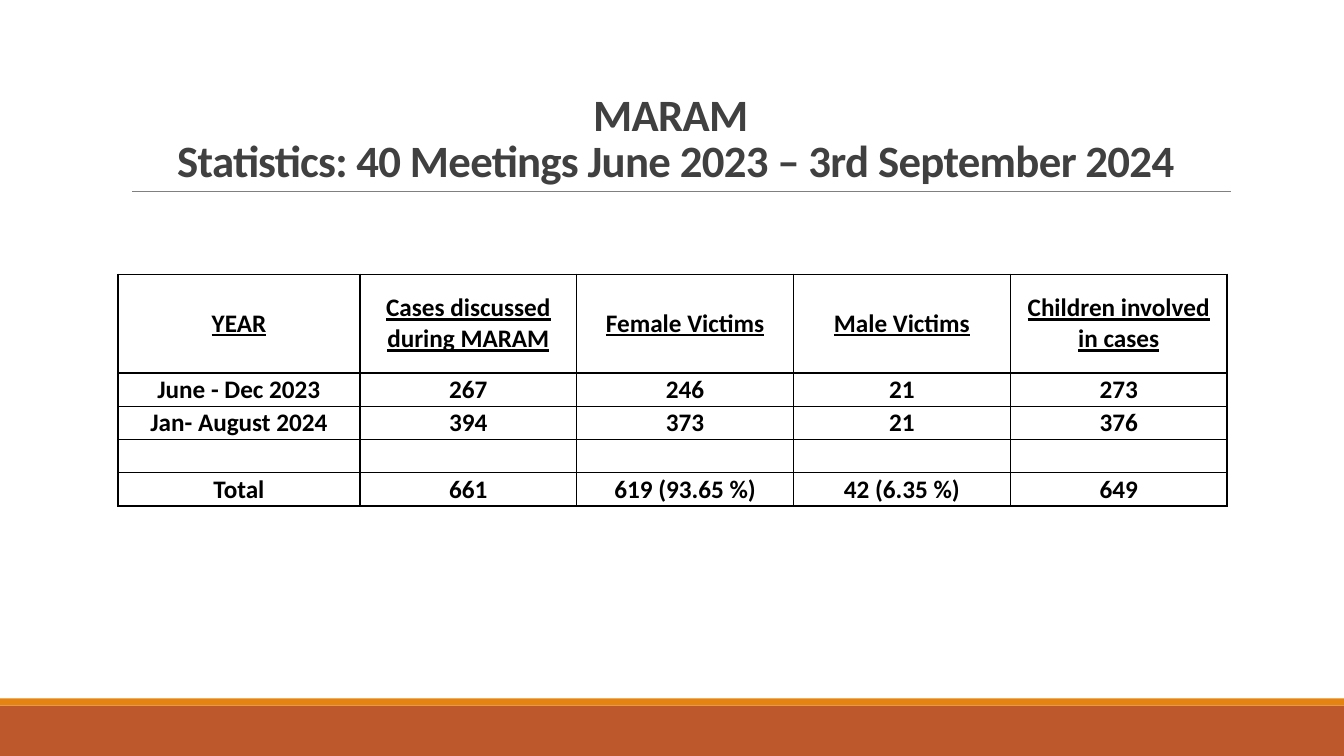
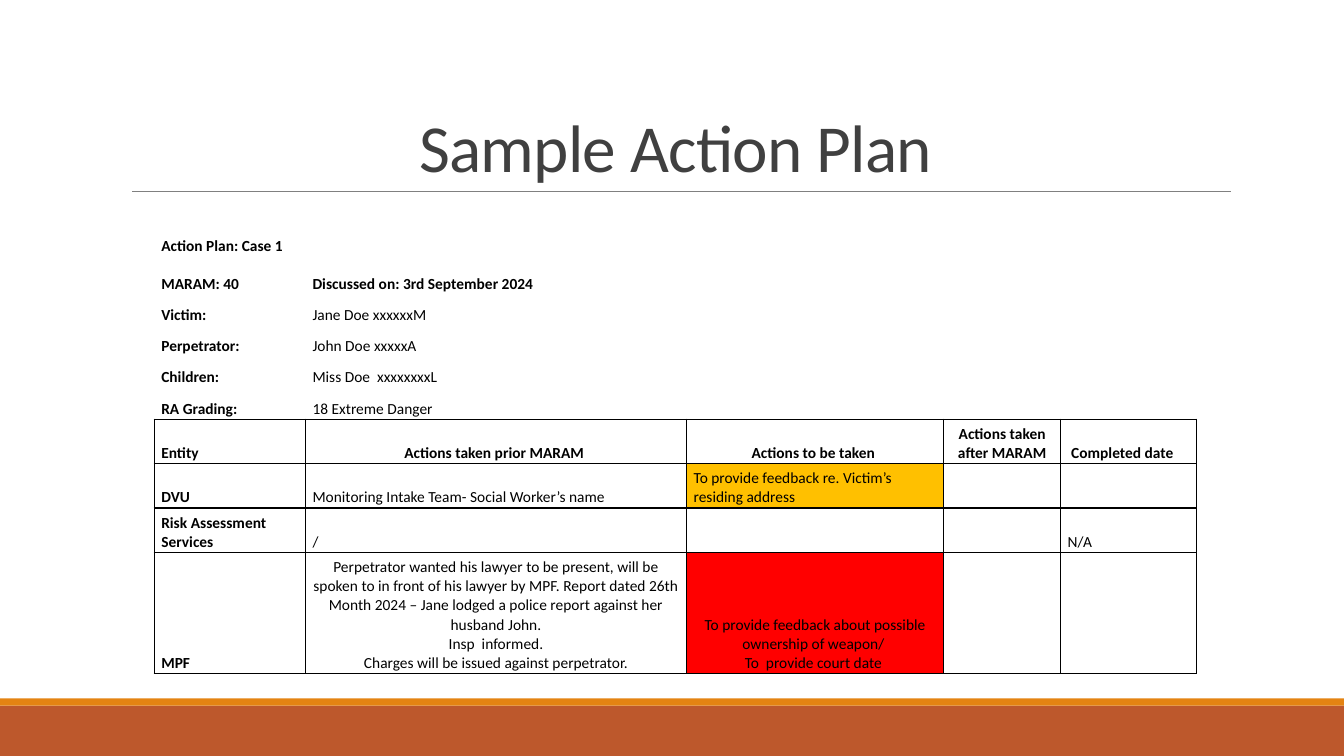
from pptx import Presentation
from pptx.dml.color import RGBColor
from pptx.enum.shapes import MSO_CONNECTOR, MSO_SHAPE
from pptx.enum.text import MSO_ANCHOR, MSO_AUTO_SIZE, PP_ALIGN
from pptx.oxml import parse_xml
from pptx.oxml.ns import nsdecls, qn
from pptx.util import Emu, Pt

SCALE = 9144
WIDTH, HEIGHT = 1333, 750
FONT = "Calibri"
BLACK, GREY, RULE = "000000", "404040", "808080"
RUST, AMBER = "BD582C", "E48312"
YELLOW, RED = "FFC000", "FF0000"
PLAIN = "{2D5ABB26-0587-4C30-8999-92F81FD0307C}"

STATS = [
    ["YEAR", "Cases discussed during MARAM", "Female Victims", "Male Victims",
     "Children involved in cases"],
    ["June - Dec 2023", "267", "246", "21", "273"],
    ["Jan- August 2024", "394", "373", "21", "376"],
    ["", "", "", "", ""],
    ["Total", "661", "619 (93.65 %)", "42 (6.35 %)", "649"],
]
PLAN = [
    ["Action Plan: Case 1\nMARAM: 40", "Discussed on: 3rd September 2024", "", "", ""],
    ["Victim:", "Jane Doe xxxxxxM", "", "", ""],
    ["Perpetrator:", "John Doe xxxxxA", "", "", ""],
    ["Children:", "Miss Doe  xxxxxxxxL", "", "", ""],
    ["RA Grading:", "18 Extreme Danger", "", "", ""],
    ["Entity", "Actions taken prior MARAM ", "Actions to be taken ",
     "Actions taken after MARAM", " Completed date"],
    ["DVU", "Monitoring Intake Team- Social Worker’s name",
     "To provide feedback re. Victim’s residing address", "", ""],
    ["Risk Assessment Services", "/", "", "", "N/A"],
    ["MPF",
     "Perpetrator wanted his lawyer to be present, will be spoken to in front of "
     "his lawyer by MPF. Report dated 26th Month 2024 – Jane lodged a police report "
     "against her husband John.\vInsp  informed.\vCharges will be issued against "
     "perpetrator.",
     "To provide feedback about possible ownership of weapon/ \nTo  provide court date ",
     "", ""],
]
ENTITY = 5
CENTRED = {(5, 1), (5, 2), (5, 3), (8, 1), (8, 2)}
FILLS = {(6, 2): YELLOW, (8, 2): RED}


def px(num):
    """Turn px into EMU."""
    return Emu(num * SCALE)


def rgb(code):
    """Turn a hex string into a colour."""
    return RGBColor.from_string(code)


def write(frame, text, size, color=BLACK, bold=False, line=False, mid=False,
          lead=None, track=None, gap=0):
    """Put text into a frame and format its paragraphs and runs."""
    frame.text = text
    frame.word_wrap = True
    for num, para in enumerate(frame.paragraphs):
        para.alignment = PP_ALIGN.CENTER if mid else PP_ALIGN.LEFT
        para.line_spacing = lead
        para.space_before = Pt(gap if num else 0)
        for run in para.runs:
            font = run.font
            font.name, font.size = FONT, Pt(size)
            font.bold, font.underline = bold, line
            font.color.rgb = rgb(color)
            if track is not None:
                run._r.get_or_add_rPr().set("spc", str(track))


def band(slide, top, height, color):
    """Draw a band across the whole slide."""
    shape = slide.shapes.add_shape(
        MSO_SHAPE.RECTANGLE, 0, px(top), px(WIDTH), px(height))
    shape.shadow.inherit = False
    shape.fill.solid()
    shape.fill.fore_color.rgb = rgb(color)
    shape.line.fill.background()


def rule(slide, left, right, top):
    """Draw the thin line under the title."""
    line = slide.shapes.add_connector(
        MSO_CONNECTOR.STRAIGHT, px(left), px(top), px(right), px(top))
    line.line.color.rgb = rgb(RULE)
    line.line.width = Pt(0.5)
    line._element.spPr.append(parse_xml(f"<a:effectLst {nsdecls('a')}/>"))


def start(deck, text, size, bold=False):
    """Add a slide with its bands, line and title."""
    slide = deck.slides.add_slide(deck.slide_layouts[5])
    band(slide, 700, 50, RUST)
    band(slide, 693, 7, AMBER)
    rule(slide, 131, 1221, 190)
    title = slide.shapes.title
    title.left, title.top = px(120), px(31)
    title.width, title.height = px(1100), px(159)
    frame = title.text_frame
    frame.auto_size = MSO_AUTO_SIZE.NONE
    frame.vertical_anchor = MSO_ANCHOR.BOTTOM
    write(frame, text, size, color=GREY, bold=bold, mid=True, lead=0.85, track=-50)
    return slide


def edge(cell):
    """Give a cell a thin black border on each side."""
    props = cell._tc.get_or_add_tcPr()
    for num, side in enumerate("LRTB"):
        props.insert(num, parse_xml(
            f'<a:ln{side} {nsdecls("a")} w="12700"><a:solidFill>'
            f'<a:srgbClr val="{BLACK}"/></a:solidFill></a:ln{side}>'))


def grid(slide, left, top, cols, rows):
    """Add a plain table with the given column widths and row heights."""
    table = slide.shapes.add_table(
        len(rows), len(cols), px(left), px(top), px(sum(cols)), px(sum(rows))).table
    table.first_row = table.horz_banding = False
    table._tbl.tblPr.find(qn("a:tableStyleId")).text = PLAIN
    for col, width in zip(table.columns, cols):
        col.width = px(width)
    for row, height in zip(table.rows, rows):
        row.height = px(height)
    return table


def fill(cell, text, size, back=None, box=True, anchor=MSO_ANCHOR.BOTTOM, **style):
    """Set a cell's text, margins, fill and border."""
    cell.margin_left = cell.margin_right = px(7)
    cell.margin_top = cell.margin_bottom = px(1 if text else 0)
    cell.vertical_anchor = anchor
    write(cell.text_frame, text, size, **style)
    if back:
        cell.fill.solid()
        cell.fill.fore_color.rgb = rgb(back)
    else:
        cell.fill.background()
    if box:
        edge(cell)


def stats(deck):
    """Build the slide of meeting statistics."""
    slide = start(
        deck, "MARAM \vStatistics: 40 Meetings June 2023 – 3rd September 2024", 32, True)
    table = grid(slide, 117, 272, [240] + [215] * 4, [98] + [33] * 4)
    for row, texts in enumerate(STATS):
        for col, text in enumerate(texts):
            fill(table.cell(row, col), text, 18, anchor=MSO_ANCHOR.MIDDLE,
                 bold=True, line=row == 0, mid=True)


def plan(deck):
    """Build the slide of the sample action plan."""
    slide = start(deck, "Sample Action Plan", 48)
    table = grid(slide, 153, 229, [150, 378, 255, 116, 135],
                 [63] + [31] * 4 + [44] * 3 + [120])
    for row, texts in enumerate(PLAN):
        for col, text in enumerate(texts):
            fill(table.cell(row, col), text, 11, back=FILLS.get((row, col)),
                 box=row >= ENTITY, bold=col == 0 or row in (0, ENTITY),
                 mid=(row, col) in CENTRED, gap=0 if row else 13)


def main():
    """Build and save the deck."""
    deck = Presentation()
    deck.slide_width, deck.slide_height = px(WIDTH), px(HEIGHT)
    stats(deck)
    plan(deck)
    deck.save("out.pptx")


if __name__ == "__main__":
    main()
